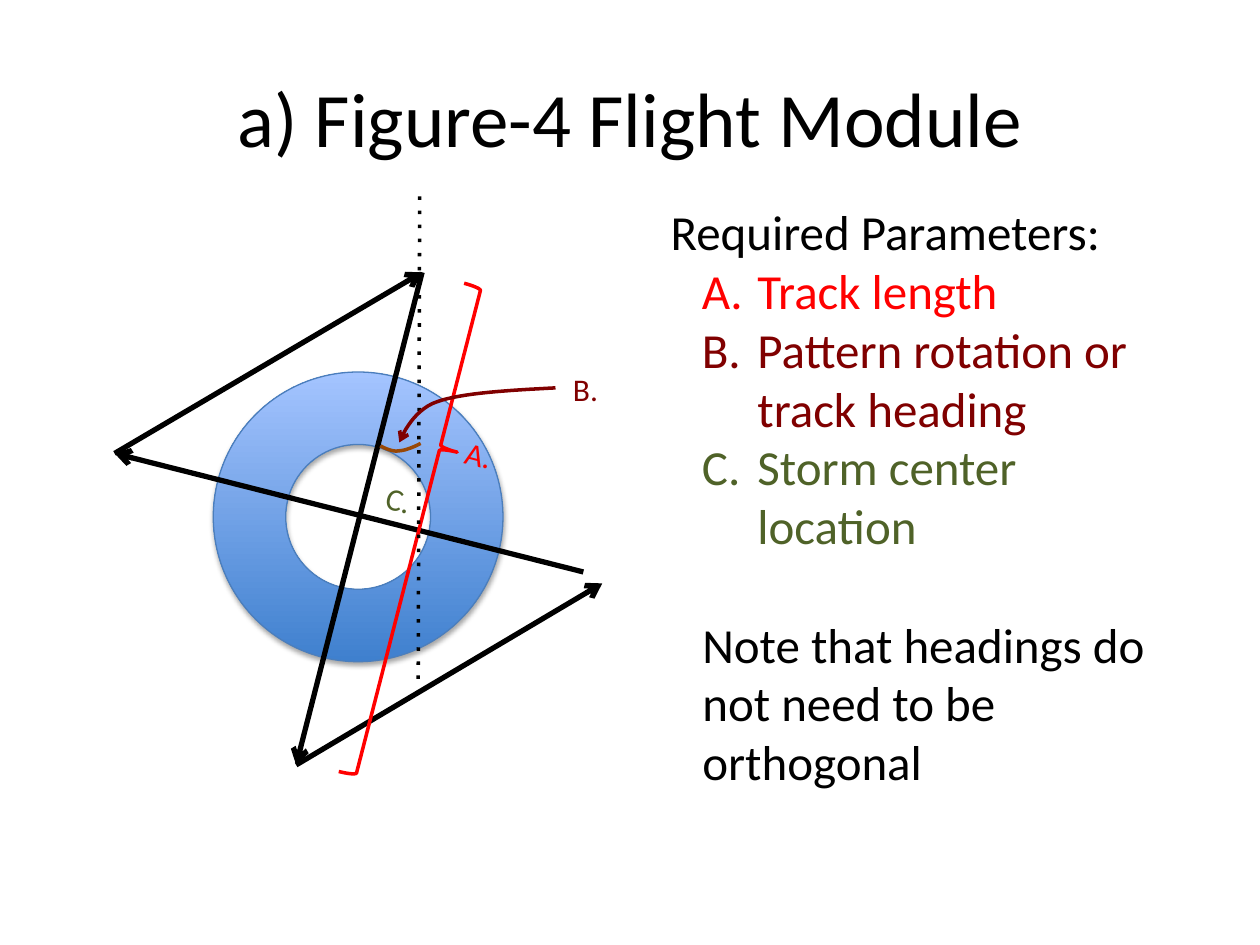
from lxml.etree import SubElement
from pptx import Presentation
from pptx.dml.color import RGBColor
from pptx.enum.shapes import MSO_CONNECTOR, MSO_SHAPE
from pptx.enum.text import MSO_ANCHOR, MSO_AUTO_SIZE, PP_ALIGN
from pptx.oxml.ns import qn
from pptx.util import Cm, Pt

BLACK, RED, MAROON, GREEN = "000000", "FF0000", "800000", "4F6228"
TILT = 14.4


def color(text):
    return RGBColor.from_string(text)


def add_xml(parent, tag, **attrs):
    return SubElement(parent, qn(tag), {k: str(v) for k, v in attrs.items()})


def box(*sizes):
    return [Cm(size) for size in sizes]


def put_text(para, text, size=28, ink=BLACK, align=PP_ALIGN.LEFT,
             left=0, hang=0, number=False, gap=0):
    para.alignment = align
    para.space_before = Pt(gap)
    run = para.add_run()
    run.text = text
    run.font.name, run.font.size = "Calibri", Pt(size)
    run.font.color.rgb = color(ink)
    props = para._p.get_or_add_pPr()
    props.set("marL", str(Cm(left)))
    props.set("indent", str(-Cm(hang)))
    if number:
        add_xml(props, "a:buFont", typeface="+mj-lt")
        add_xml(props, "a:buAutoNum", type="alphaUcPeriod")


def style_line(shape, ink, width, dash=None, arrow=False):
    shape.line.color.rgb = color(ink)
    shape.line.width = Pt(width)
    line = shape.line._get_or_add_ln()
    if dash:
        add_xml(line, "a:prstDash", val=dash)
    if arrow:
        add_xml(line, "a:tailEnd", type="arrow")


def add_line(slide, start, end, width=3, **look):
    line = slide.shapes.add_connector(
        MSO_CONNECTOR.STRAIGHT, *box(*start), *box(*end))
    style_line(line, BLACK, width, **look)
    add_xml(line._element.spPr, "a:effectLst")


def add_curve(slide, start, parts, ink, arrow=False, steps=16):
    """Trace cubic Bezier parts, each given by two handles and an end."""
    dots, first = [], start
    for one, two, last in parts:
        for step in range(1, steps + 1):
            t = step / steps
            u = 1 - t
            dots.append([
                Cm(u**3 * a + 3 * u * u * t * b + 3 * u * t * t * c + t**3 * d)
                for a, b, c, d in zip(first, one, two, last)])
        first = last
    maker = slide.shapes.build_freeform(*box(*start))
    maker.add_line_segments(dots, close=False)
    curve = maker.convert_to_shape()
    curve.shadow.inherit = False
    curve.fill.background()
    style_line(curve, ink, 2, arrow=arrow)


def add_label(slide, text, ink, left, top, turn=0):
    label = slide.shapes.add_textbox(*box(left, top, 1.1, 1.02))
    label.rotation = turn
    label.text_frame.word_wrap = False
    label.text_frame.auto_size = MSO_AUTO_SIZE.SHAPE_TO_FIT_TEXT
    put_text(label.text_frame.paragraphs[0], text, size=18, ink=ink)


def add_storm(slide):
    ring = slide.shapes.add_shape(MSO_SHAPE.DONUT, *box(4.3, 7.5, 5.84, 5.84))
    ring.fill.gradient()
    ring.fill.gradient_angle = 90
    for stop, place, ink in zip(ring.fill.gradient_stops, (0, 1),
                                ("3F80CE", "A4C4FF")):
        stop.position, stop.color.rgb = place, color(ink)
    style_line(ring, "4B7EBC", 0.75)
    # Soft shadow below the ring
    ring.shadow.inherit = False
    effects = ring._element.spPr.find(qn("a:effectLst"))
    shade = add_xml(effects, "a:outerShdw", blurRad=Pt(3.1), dist=Pt(1.8),
                    dir=90 * 60000, rotWithShape=0)
    add_xml(add_xml(shade, "a:srgbClr", val=BLACK), "a:alpha", val=35000)


def add_brace(slide):
    brace = slide.shapes.add_shape(
        MSO_SHAPE.LEFT_BRACE, *box(8.08, 5.64, 0.71, 10.16))
    brace.adjustments[0], brace.adjustments[1] = 0.083, 0.328
    brace.rotation = TILT
    brace._element.spPr.find(qn("a:xfrm")).set("flipH", "1")
    brace.shadow.inherit = False
    brace.fill.background()
    style_line(brace, RED, 2)


def add_title(slide, text):
    title = slide.shapes.title
    title.left, title.top, title.width, title.height = box(
        1.27, 0.76, 22.86, 3.18)
    title.text_frame.vertical_anchor = MSO_ANCHOR.MIDDLE
    put_text(title.text_frame.paragraphs[0], text, size=44,
             align=PP_ALIGN.CENTER)


def add_list(slide):
    frame = slide.shapes.add_textbox(*box(13.27, 3.94, 10.87, 12.22)).text_frame
    frame.word_wrap = True
    frame.auto_size = MSO_AUTO_SIZE.SHAPE_TO_FIT_TEXT
    put_text(frame.paragraphs[0], "Required Parameters:")
    for text, ink in (("Track length", RED),
                      ("Pattern rotation or track heading", MAROON),
                      ("Storm center location", GREEN)):
        put_text(frame.add_paragraph(), text, ink=ink, left=1.75, hang=1.12,
                 number=True)
    put_text(frame.add_paragraph(),
             "Note that headings do not need to be orthogonal",
             left=0.64, gap=34)


def main():
    deck = Presentation()
    deck.slide_width, deck.slide_height = box(25.4, 19.05)
    slide = deck.slides.add_slide(deck.slide_layouts[5])
    add_title(slide, "a) Figure-4 Flight Module")
    add_storm(slide)
    add_list(slide)

    # Flight legs
    north, south, west = (8.51, 5.49), (5.97, 15.42), (2.31, 9.14)
    for start, end in ((north, south), (south, (12.14, 11.76)),
                       ((11.76, 11.53), west), (west, north)):
        add_line(slide, start, end, arrow=True)

    # Storm center, track length and rotation angle
    add_label(slide, "C.", GREEN, 7.54, 9.58, turn=TILT)
    add_brace(slide)
    add_label(slide, "A.", RED, 9.14, 8.66, turn=TILT)
    add_line(slide, (8.46, 3.96), (8.43, 13.89), width=2, dash="dot")
    add_curve(slide, (8.48, 8.94),
              [((8.33, 9.02), (8.15, 9.09), (8.03, 9.09)),
               ((7.9, 9.12), (7.67, 8.99), (7.67, 8.99))], "984807")
    add_label(slide, "B.", MAROON, 11.3, 7.34)
    add_curve(slide, (11.2, 7.82),
              [((10.26, 7.87), (9.32, 7.92), (8.81, 8.1)),
               ((8.28, 8.28), (8.05, 8.92), (8.05, 8.92))], MAROON, arrow=True)
    deck.save("out.pptx")


if __name__ == "__main__":
    main()
